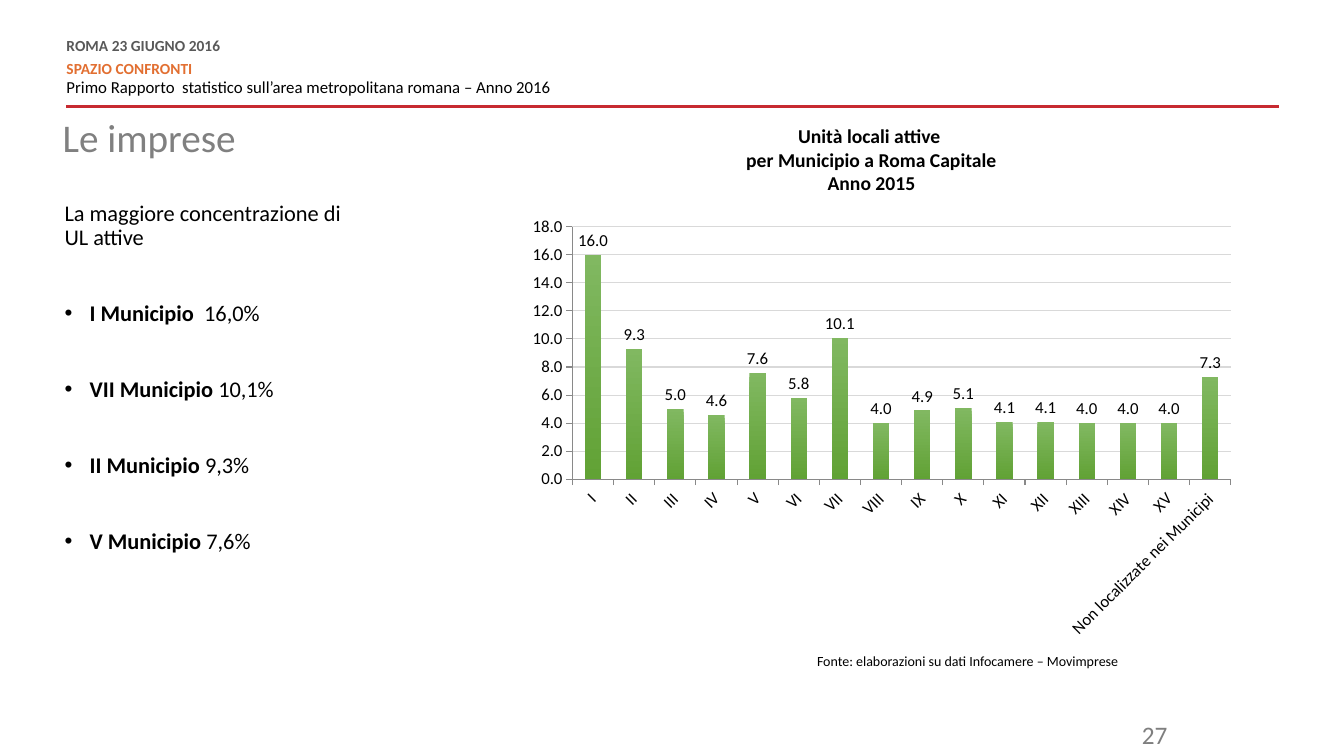
from pptx import Presentation, util as u
from pptx.chart import data as cd
from pptx.dml import color as col
from pptx.enum import chart as ce, shapes as sh, text as te
from lxml import etree
from pptx.oxml import parse_xml
from pptx.oxml.ns import qn, nsdecls

# Content: a paragraph is (runs, paragraph format); a run is (text, font format)
TITLE = "Le imprese"
HEAD = [
    ([("ROMA 23 GIUGNO 2016", {"size": 11, "bold": True, "hue": "595959"})],
     {"space_after": 6}),
    ([("SPAZIO CONFRONTI", {"size": 11, "bold": True, "hue": "E26F31"})], {}),
    ([("Primo Rapporto  statistico sull’area metropolitana romana – Anno 2016",
       {"size": 12})], {"space_before": 3, "space_after": 6}),
]
INTRO = "La maggiore concentrazione di UL attive"
TOP = [("I Municipio  ", "16,0%"), ("VII Municipio ", "10,1%"),
       ("II Municipio ", "9,3%"), ("V Municipio ", "7,6%")]
NAME = ["Unità locali attive ", "per Municipio a Roma Capitale", "Anno 2015"]
NOTE = "Fonte: elaborazioni su dati Infocamere – Movimprese"
PAGE = "27"
CATS = ["I", "II", "III", "IV", "V", "VI", "VII", "VIII", "IX", "X", "XI",
        "XII", "XIII", "XIV", "XV", "Non localizzate nei Municipi"]
VALS = [16, 9.3, 5, 4.6, 7.6, 5.8, 10.1, 4, 4.9, 5.1, 4.1, 4.1, 4, 4, 4, 7.3]
FONT, BLACK, GREY = "Calibri", "000000", "898989"
PLOT = {"x": 0.075, "y": 0.044, "w": 0.907, "h": 0.574}


def rgb(hue):
    return col.RGBColor.from_string(hue)


def style(font, size, hue=BLACK, bold=False):
    vals = {"name": FONT, "size": u.Pt(size), "bold": bold}
    for key, val in vals.items():
        setattr(font, key, val)
    font.color.rgb = rgb(hue)


def bullet(para):
    props = para._p.get_or_add_pPr()
    props.set("marL", str(u.Pt(18)))
    props.set("indent", str(-u.Pt(18)))
    etree.SubElement(props, qn("a:buFont")).set("typeface", "Arial")
    etree.SubElement(props, qn("a:buChar")).set("char", "•")


def write(frame, paras, pad=None, wrap=True):
    frame.word_wrap = wrap
    frame.vertical_anchor = te.MSO_ANCHOR.TOP
    if pad is not None:
        for side in ("left", "top", "right", "bottom"):
            setattr(frame, "margin_" + side, u.Pt(pad))
    for i, (runs, form) in enumerate(paras):
        para = frame.add_paragraph() if i else frame.paragraphs[0]
        for key, val in form.items():
            if key == "bullet":
                bullet(para)
            else:
                setattr(para, key, u.Pt(val) if key.startswith("space") else val)
        for words, look in runs:
            run = para.add_run()
            run.text = words
            style(run.font, **look)


def place(*box):
    return [u.Pt(v) for v in box]


def label(box, paras, **opts):
    write(slide.shapes.add_textbox(*place(*box)).text_frame, paras, **opts)


deck = Presentation()
deck.slide_width, deck.slide_height = u.Pt(960), u.Pt(540)
slide = deck.slides.add_slide(deck.slide_layouts[5])

# Header and red rule
label((47.5, 28, 374.5, 42.5),
      [(runs, {"line_spacing": u.Pt(10.8), **form}) for runs, form in HEAD], pad=0)
rule = slide.shapes.add_connector(sh.MSO_CONNECTOR.STRAIGHT,
                                  *place(47.5, 76.25, 913.5, 76.25))
rule.line.color.rgb, rule.line.width = rgb("C72A31"), u.Pt(2)
etree.SubElement(rule._element.spPr, qn("a:effectLst"))

# Title
head = slide.shapes.title
head.left, head.top, head.width, head.height = place(44.75, 85, 282, 81.5)
write(head.text_frame, [([(TITLE, {"size": 28, "hue": "808080"})],
      {"alignment": te.PP_ALIGN.LEFT, "line_spacing": 0.9})], pad=0)
head.text_frame.auto_size = te.MSO_AUTO_SIZE.NONE

# Ranking
body = [([(INTRO, {"size": 16})], {"line_spacing": 0.9})]
for place_name, share in TOP:
    body.append(([(place_name, {"size": 16, "bold": True}), (share, {"size": 16})],
                 {"line_spacing": 0.9, "space_before": 37, "bullet": True}))
label((39, 140.5, 223, 270), body)

# Chart heading, source and page number
label((370, 85, 505, 60),
      [([(line, {"size": 14, "bold": True})], {"alignment": te.PP_ALIGN.CENTER})
       for line in NAME])
label((576.5, 462.25, 233.5, 19.5), [([(NOTE, {"size": 10})], {})], wrap=False)
label((784, 510.5, 57, 25), [([(PAGE, {"size": 18, "hue": "7F7F7F"})],
                              {"alignment": te.PP_ALIGN.RIGHT})])

# Chart
data = cd.CategoryChartData(number_format="#,##0.0")
data.categories = CATS
data.add_series("Unità locali", VALS)
chart = slide.shapes.add_chart(ce.XL_CHART_TYPE.COLUMN_CLUSTERED,
                               *place(370, 148.25, 518.5, 314), data).chart
chart.has_legend = chart.has_title = False
style(chart.font, 12)
for axis in (chart.category_axis, chart.value_axis):
    style(axis.tick_labels.font, 12)
    axis.major_tick_mark = ce.XL_TICK_MARK.OUTSIDE
    axis.format.line.color.rgb = rgb(GREY)
    axis.format.line.width = u.Pt(0.75)
chart.category_axis._element.find(
    qn("c:txPr")).find(qn("a:bodyPr")).set("rot", "-2700000")
scale = chart.value_axis
scale.minimum_scale, scale.maximum_scale, scale.major_unit = 0, 18, 2
scale.tick_labels.number_format = "#,##0.0"
scale.tick_labels.number_format_is_linked = False
grid = scale.major_gridlines.format.line
grid.color.rgb, grid.width = rgb("D9D9D9"), u.Pt(0.75)

# Bars and their values
plot = chart.plots[0]
plot.gap_width, plot.vary_by_categories = 150, False
fill = plot.series[0].format.fill
fill.gradient()
fill.gradient_angle = 270
for stop, hue in zip(fill.gradient_stops, ("81B861", "61A235")):
    stop.color.rgb = rgb(hue)
plot.has_data_labels = True
tags = plot.data_labels
for key, val in {"show_value": True, "number_format": "#,##0.0",
                 "number_format_is_linked": False,
                 "position": ce.XL_LABEL_POSITION.OUTSIDE_END}.items():
    setattr(tags, key, val)
style(tags.font, 12)

# Fixed plot area
area = chart._chartSpace.chart.plotArea
for old in area.findall(qn("c:layout")):
    area.remove(old)
spots = "".join(f'<c:{k} val="{v}"/>' for k, v in PLOT.items())
area.insert(0, parse_xml(
    f'<c:layout {nsdecls("c")}><c:manualLayout><c:layoutTarget val="inner"/>'
    f'<c:xMode val="edge"/><c:yMode val="edge"/>{spots}'
    '</c:manualLayout></c:layout>'))

deck.save("out.pptx")
